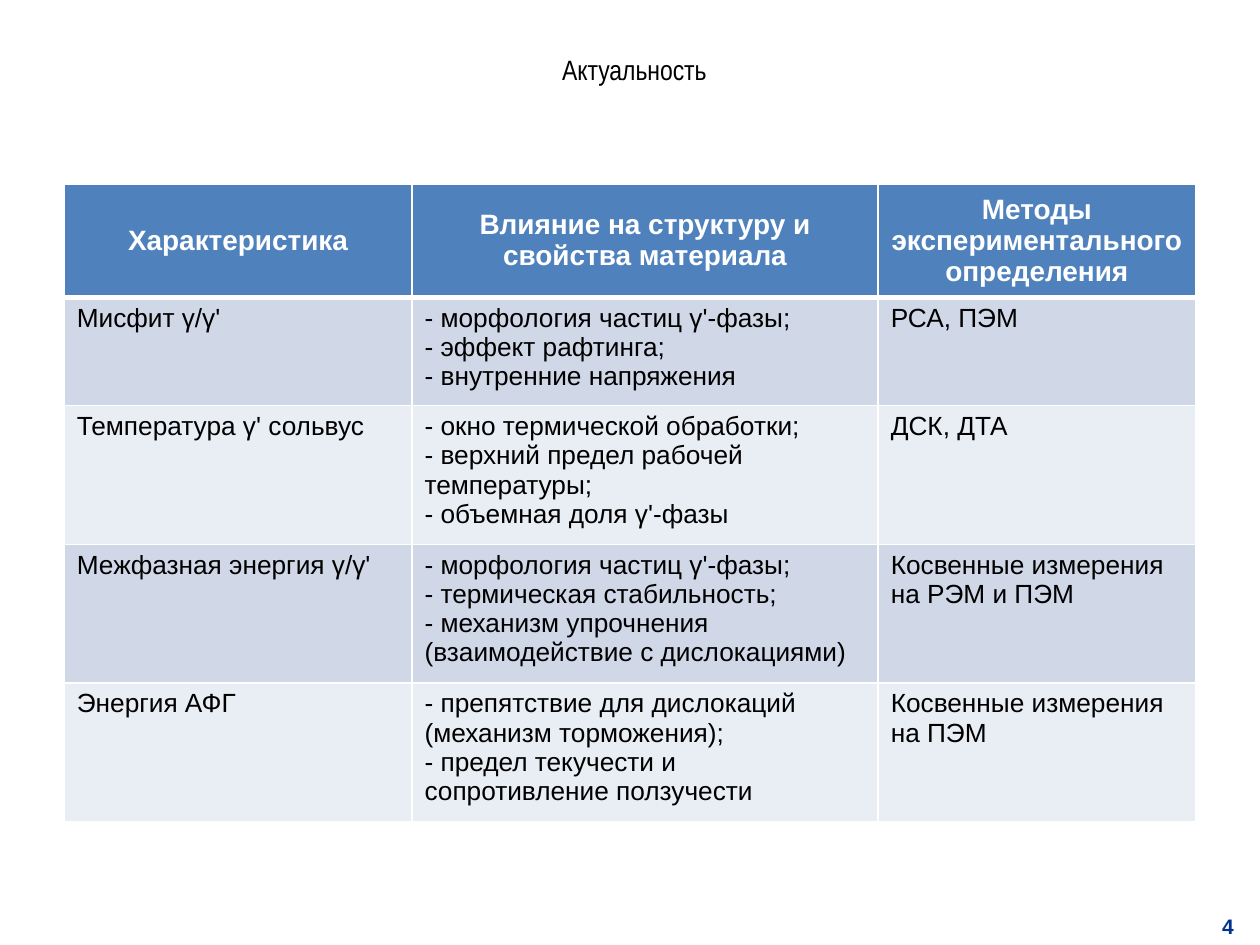
import pptx
import pptx.dml.color
import pptx.enum.text
import pptx.oxml.ns
import pptx.util
from lxml import etree

Inches = pptx.util.Inches
Pt = pptx.util.Pt
ALIGN = pptx.enum.text.PP_ALIGN
ANCHOR = pptx.enum.text.MSO_ANCHOR

HEAD, BANDS = "4F81BD", ("D0D8E8", "E9EDF4")
WHITE, BLACK, NAVY = "FFFFFF", "000000", "00338D"

COLS = (2.76, 3.7, 2.52)
HEIGHTS = (0.89, 0.86, 1.1, 1.1, 1.1)
ROWS = (
    ("Характеристика", "Влияние на структуру и свойства материала",
     "Методы экспериментального определения"),
    ("Мисфит γ/γ'",
     "- морфология частиц γ'-фазы;\n- эффект рафтинга;\n- внутренние напряжения",
     "РСА, ПЭМ"),
    ("Температура γ' сольвус",
     "- окно термической обработки;\n- верхний предел рабочей температуры;\n"
     "- объемная доля γ'-фазы",
     "ДСК, ДТА"),
    ("Межфазная энергия γ/γ'",
     "- морфология частиц γ'-фазы;\n- термическая стабильность;\n"
     "- механизм упрочнения (взаимодействие с дислокациями)",
     "Косвенные измерения на РЭМ и ПЭМ"),
    ("Энергия АФГ",
     "- препятствие для дислокаций (механизм торможения);\n"
     "- предел текучести и сопротивление ползучести",
     "Косвенные измерения на ПЭМ"),
)


def paint(target, color):
    """Give a fill a solid colour."""
    target.solid()
    target.fore_color.rgb = pptx.dml.color.RGBColor.from_string(color)


def write(frame, text, size, color, bold=False, align=ALIGN.LEFT, name="Arial"):
    frame.text = text
    for para in frame.paragraphs:
        para.alignment = align
        para.font.name = name
        para.font.size = Pt(size)
        para.font.bold = bold
        paint(para.font.fill, color)


def add_label(slide, box, text, size, color, **style):
    frame = slide.shapes.add_textbox(*map(Inches, box)).text_frame
    frame.word_wrap = True
    write(frame, text, size, color, align=ALIGN.CENTER, **style)


def add_borders(cell, bottom):
    """Draw white cell borders; must run before the cell is filled."""
    props = cell._tc.get_or_add_tcPr()
    qn = pptx.oxml.ns.qn
    for side, width in (("L", 1), ("R", 1), ("T", 1), ("B", bottom)):
        line = etree.SubElement(props, qn(f"a:ln{side}"), w=str(Pt(width)))
        fill = etree.SubElement(line, qn("a:solidFill"))
        etree.SubElement(fill, qn("a:srgbClr"), val=WHITE)


def add_grid(slide, left, top):
    table = slide.shapes.add_table(
        len(ROWS), len(COLS), Inches(left), Inches(top),
        Inches(sum(COLS)), Inches(sum(HEIGHTS))).table
    for col, width in zip(table.columns, COLS):
        col.width = Inches(width)
    for i, (row, height, texts) in enumerate(zip(table.rows, HEIGHTS, ROWS)):
        row.height = Inches(height)
        for cell, text in zip(row.cells, texts):
            add_borders(cell, 1 if i else 3)
            paint(cell.fill, BANDS[(i - 1) % 2] if i else HEAD)
            if i:
                write(cell.text_frame, text, 15, BLACK)
            else:
                cell.vertical_anchor = ANCHOR.MIDDLE
                write(cell.text_frame, text, 16, WHITE, True, ALIGN.CENTER)
                # the third row's top edge is thin; the head's lower edge is thick
        if i == 1:
            for cell in row.cells:
                edge = cell._tc.tcPr.find(pptx.oxml.ns.qn("a:lnT"))
                edge.set("w", str(Pt(3)))


def main():
    deck = pptx.Presentation()
    deck.slide_width, deck.slide_height = Inches(10), Inches(7.5)
    slide = deck.slides.add_slide(deck.slide_layouts[6])
    add_label(slide, (2.24, 0.37, 5.59, 0.37), "Актуальность", 16, BLACK,
              name="Arial Narrow")
    add_label(slide, (9.55, 7.2, 0.39, 0.31), "4", 12, NAVY, bold=True)
    add_grid(slide, 0.51, 1.46)
    deck.save("out.pptx")


if __name__ == "__main__":
    main()
